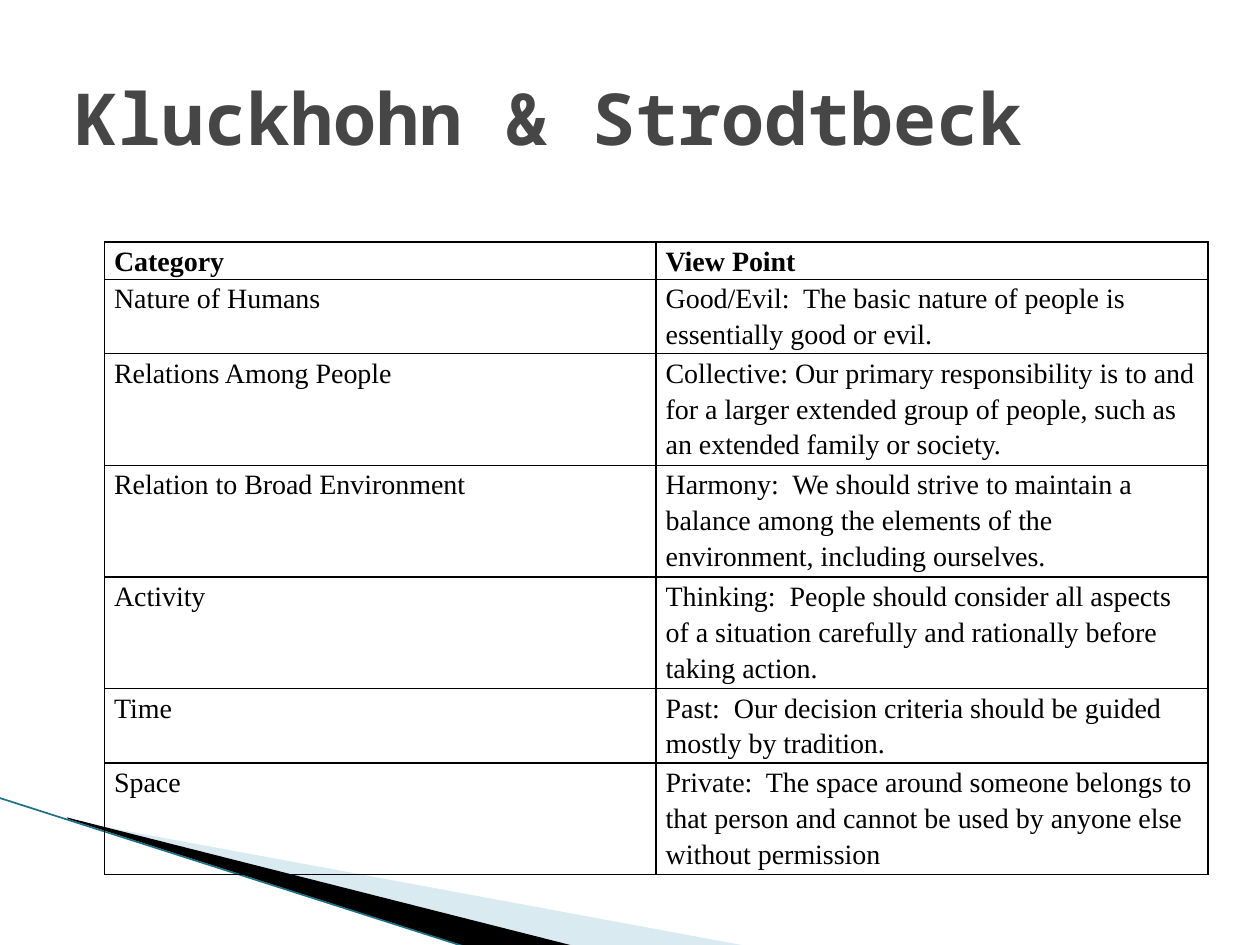
"""Build the Kluckhohn & Strodtbeck slide with its table of view points."""
from typing import NamedTuple

from lxml.etree import SubElement
from pptx import Presentation
from pptx.dml.color import RGBColor
from pptx.enum.shapes import MSO_CONNECTOR
from pptx.enum.text import MSO_ANCHOR, PP_ALIGN
from pptx.oxml.ns import qn
from pptx.util import Cm, Pt

HUES = {"ink": "000000", "title": "464646", "pale": "A0CBDC", "teal": "1B7085"}
LINE = 0.75


class Row(NamedTuple):
    """One table row and the number of lines it holds."""
    label: str
    view: str
    lines: int


class Wedge(NamedTuple):
    """A filled outline with its corners in centimetres."""
    points: list[tuple[float, float]]
    hue: str
    alpha: int = 100


ROWS = [
    Row("Category", "View Point", 1),
    Row("Nature of Humans", "Good/Evil:  The basic nature of people is essentially good or evil.", 2),
    Row("Relations Among People", "Collective: Our primary responsibility is to and for a larger "
        "extended group of people, such as an extended family or society.", 3),
    Row("Relation to Broad Environment", "Harmony:  We should strive to maintain a balance among "
        "the elements of the environment, including ourselves.", 3),
    Row("Activity", "Thinking:  People should consider all aspects of a situation carefully and "
        "rationally before taking action.", 3),
    Row("Time", "Past:  Our decision criteria should be guided mostly by tradition.", 2),
    Row("Space", "Private:  The space around someone belongs to that person and cannot be used by "
        "anyone else without permission", 3),
]
WEDGES = [
    Wedge([(1.4, 16.54), (15.11, 19.08), (11.58, 19.08), (1.4, 16.51)], "pale", 40),
    Wedge([(1.35, 16.48), (11.61, 19.08), (9.45, 19.1), (1.37, 16.51)], "ink"),
]


def tint(hue: str) -> RGBColor:
    """Return a named colour."""
    return RGBColor.from_string(HUES[hue])


def write(frame, text: str, *, font: str, size: float, hue: str,
          bold: bool = False, space: float = 1.0) -> None:
    """Fill a text frame with one formatted paragraph."""
    frame.text = text
    para = frame.paragraphs[0]
    para.alignment = PP_ALIGN.LEFT
    para.line_spacing = space
    face = para.runs[0].font
    face.name, face.size, face.bold = font, Pt(size), bold
    face.color.rgb = tint(hue)


def draw_wedge(slide, wedge: Wedge) -> None:
    """Draw one wedge without an outline."""
    spots = [(Cm(x), Cm(y)) for x, y in wedge.points]
    pen = slide.shapes.build_freeform(*spots[0])
    pen.add_line_segments(spots[1:], close=True)
    shape = pen.convert_to_shape()
    shape.shadow.inherit = False
    shape.line.fill.background()
    shape.fill.solid()
    shape.fill.fore_color.rgb = tint(wedge.hue)
    if wedge.alpha < 100:
        color = shape.fill._xPr.find(f".//{qn('a:srgbClr')}")
        SubElement(color, qn("a:alpha"), val=str(wedge.alpha * 1000))


def draw_edge(slide) -> None:
    """Draw the thin line below the wedges."""
    edge = slide.shapes.add_connector(
        MSO_CONNECTOR.STRAIGHT, Cm(-0.03), Cm(16.08), Cm(9.42), Cm(19.1))
    edge.line.width = Pt(0.95)
    edge.line.color.rgb = tint("teal")
    SubElement(edge._element.spPr, qn("a:effectLst"))


def frame_cell(cell) -> None:
    """Set the margins, borders and empty fill of a cell."""
    cell.margin_left = cell.margin_right = Cm(0.19)
    cell.margin_top = cell.margin_bottom = 0
    props = cell._tc.get_or_add_tcPr()
    for side in "LRTB":
        border = SubElement(props, qn(f"a:ln{side}"), w=str(Pt(1)))
        fill = SubElement(border, qn("a:solidFill"))
        SubElement(fill, qn("a:srgbClr"), val=HUES["ink"])
    cell.fill.background()


def draw_table(slide, rows: list[Row]) -> None:
    """Draw the table, each row as high as its lines."""
    total = sum(row.lines for row in rows) * LINE
    table = slide.shapes.add_table(
        len(rows), 2, Cm(2.11), Cm(4.88), Cm(22.24), Cm(total)).table
    table.first_row = table.horz_banding = False
    for index, row in enumerate(rows):
        table.rows[index].height = Cm(row.lines * LINE)
        for cell, text in zip(table.rows[index].cells, (row.label, row.view)):
            frame_cell(cell)
            write(cell.text_frame, text, font="Times New Roman", size=16,
                  hue="ink", bold=index == 0, space=1.15)


def main() -> None:
    """Build and save the slide."""
    deck = Presentation()
    deck.slide_width, deck.slide_height = Cm(25.4), Cm(19.05)
    slide = deck.slides.add_slide(deck.slide_layouts[5])
    for wedge in WEDGES:
        draw_wedge(slide, wedge)
    draw_edge(slide)
    draw_table(slide, ROWS)
    title = slide.shapes.title
    title.left, title.top, title.width, title.height = Cm(1.27), Cm(0.76), Cm(22.86), Cm(3.18)
    title.text_frame.vertical_anchor = MSO_ANCHOR.MIDDLE
    write(title.text_frame, "Kluckhohn & Strodtbeck", font="Noto Sans Mono",
          size=41, hue="title", bold=True)
    deck.save("out.pptx")


if __name__ == "__main__":
    main()
